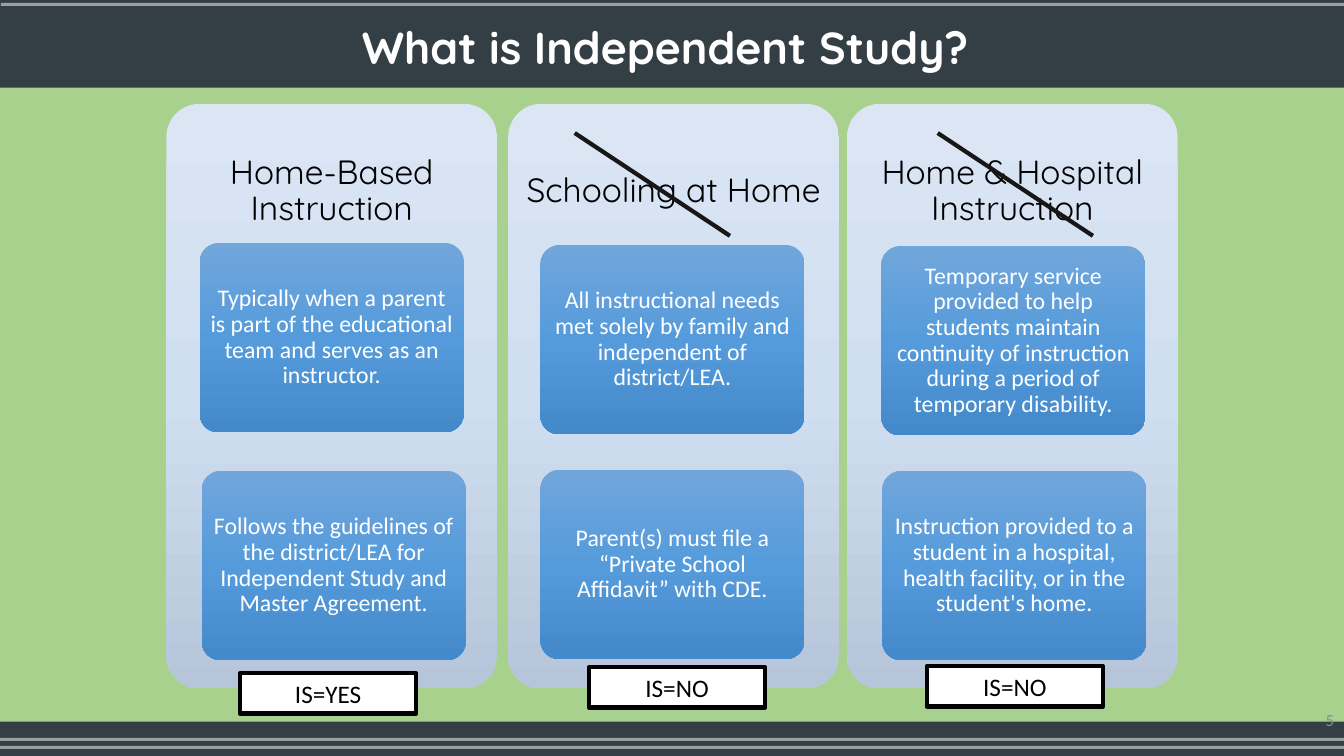
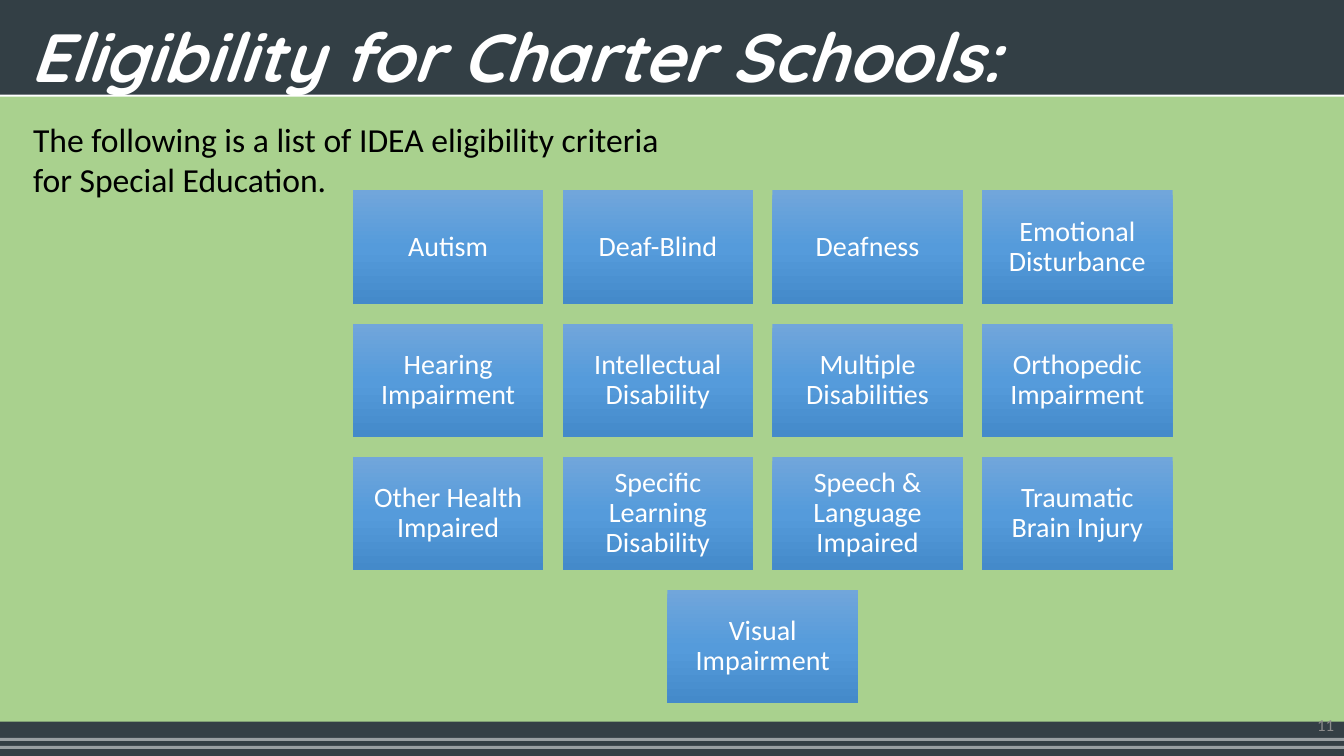
import copy

import pptx
import pptx.dml.color
import pptx.enum.shapes
import pptx.enum.text
import pptx.oxml
import pptx.oxml.ns
import pptx.util

Inches = pptx.util.Inches
Pt = pptx.util.Pt
RGBColor = pptx.dml.color.RGBColor
SHAPE = pptx.enum.shapes.MSO_SHAPE
ALIGN = pptx.enum.text.PP_ALIGN
ANCHOR = pptx.enum.text.MSO_ANCHOR
qn = pptx.oxml.ns.qn

# Shared colours, fonts and insets
SLATE = RGBColor(0x34, 0x3F, 0x45)
TITLE_BAND = RGBColor(0x33, 0x3F, 0x45)
GREEN = RGBColor(0xA9, 0xD1, 0x8E)
GREY = RGBColor(0x8C, 0x8C, 0x8C)
STRIKE = RGBColor(0x18, 0x17, 0x17)
WHITE = RGBColor(0xFF, 0xFF, 0xFF)
BLACK = RGBColor(0x00, 0x00, 0x00)
PALE_BLUES = [RGBColor(0xDB, 0xE5, 0xF3), RGBColor(0xD0, 0xDE, 0xF1), RGBColor(0xB6, 0xC5, 0xD9)]
BLUES = [RGBColor(0x71, 0xA6, 0xDB), RGBColor(0x55, 0x9B, 0xDB), RGBColor(0x44, 0x8A, 0xCA)]
BODY_FONT, HEAD_FONT = "Calibri", "Quicksand"
DEFAULT_INSETS = (0.1, 0.05, 0.1, 0.05)


def add_box(s, kind, at, fill):
    """Add an unlined shape with a solid fill, or a gradient if given a list."""
    sp = s.shapes.add_shape(kind, *map(Inches, at))
    sp.shadow.inherit = False
    sp.line.fill.background()
    if isinstance(fill, list):
        sp.fill.gradient()
        sp.fill.gradient_angle = 270
        stops = sp.element.spPr.find(".//" + qn("a:gsLst"))
        stops.insert(1, copy.deepcopy(stops[0]))
        for stop, color, position in zip(sp.fill.gradient_stops, fill, (0, 0.5, 1)):
            stop.color.rgb = color
            stop.position = position
    else:
        sp.fill.solid()
        sp.fill.fore_color.rgb = fill
    return sp


def set_text(sp, text, size, color, font=BODY_FONT, align=ALIGN.CENTER,
             anchor=ANCHOR.MIDDLE, insets=DEFAULT_INSETS, spacing=1.0, bold=False, italic=False):
    tf = sp.text_frame
    tf.text = text
    tf.word_wrap = True
    tf.auto_size = pptx.enum.text.MSO_AUTO_SIZE.NONE
    tf.vertical_anchor = anchor
    tf.margin_left, tf.margin_top, tf.margin_right, tf.margin_bottom = map(Inches, insets)
    p = tf.paragraphs[0]
    p.alignment = align
    p.line_spacing = spacing
    r = p.runs[0]
    r.font.name, r.font.size, r.font.color.rgb = font, Pt(size), color
    r.font.bold, r.font.italic = bold, italic


prs = pptx.Presentation()
prs.slide_width, prs.slide_height = Inches(13.33), Inches(7.5)
master = prs.slide_master
layout = prs.slide_layouts[5]
master.background.fill.solid()
master.background.fill.fore_color.rgb = SLATE

# Both slides: title, green panel, page number
slides = []
for title, at, panel_top, number, number_top in [
    ("What is Independent Study?", (0, 0.15, 13.2, 0.64), 0.87, "5", 6.94),
    ("Eligibility for Charter Schools:", (0, 0, 13.33, 0.94), 0.96, "11", 6.99),
]:
    s = prs.slides.add_slide(layout)
    add_box(s, SHAPE.RECTANGLE, (0, panel_top, 13.33, 7.16 - panel_top), GREEN)
    sp = s.shapes.title
    sp.left, sp.top, sp.width, sp.height = map(Inches, at)
    sp.text_frame.text = title
    s.shapes.element.append(sp.element)
    sp = s.shapes.add_textbox(Inches(10.33), Inches(number_top), Inches(3), Inches(0.4))
    set_text(sp, number, 12, GREY, align=ALIGN.RIGHT)
    slides.append(s)
study, charter = slides

# Master: white panel and translucent stripes
for i, (x, y, height, alpha) in enumerate([
    (0, 0.88, 6.26, 100), (0, 7.32, 0.03, 50), (0, 7.4, 0.03, 50), (0.01, 0.03, 0.03, 50),
]):
    sp = add_box(study, SHAPE.RECTANGLE, (x, y, 13.33, height), WHITE)
    if alpha < 100:
        color = sp.element.spPr.find(".//" + qn("a:srgbClr"))
        pptx.oxml.parse_xml(
            '<a:alpha xmlns:a="http://schemas.openxmlformats.org/drawingml/2006/main" '
            f'val="{alpha * 1000}"/>')
        color.makeelement(qn("a:alpha"))
        alpha_el = color.makeelement(qn("a:alpha"), {"val": str(alpha * 1000)})
        color.append(alpha_el)
    sp.element.nvSpPr.cNvPr.set("id", str(100 + i))
    master.shapes.element.insert(2 + i, sp.element)

# Slide 1: three columns of cards with a verdict below each
set_text(study.shapes.title, study.shapes.title.text_frame.text, 32, WHITE, HEAD_FONT,
         anchor=ANCHOR.TOP, bold=True)
columns = [
    (1.65, "Home-Based Instruction", [
        (1.98, 2.41, "Typically when a parent is part of the educational team and serves as an instructor."),
        (2.0, 4.67, "Follows the guidelines of the district/LEA for Independent Study and Master Agreement."),
    ], (2.38, 6.68, "IS=YES"), None),
    (5.04, "Schooling at Home", [
        (5.36, 2.43, "All instructional needs met solely by family and independent of district/LEA."),
        (5.36, 4.66, "Parent(s) must file a “Private School Affidavit” with CDE."),
    ], (5.84, 6.62, "IS=NO"), 5.7),
    (8.4, "Home & Hospital Instruction", [
        (8.74, 2.44, "Temporary service provided to help students maintain continuity of "
                     "instruction during a period of temporary disability."),
        (8.75, 4.67, "Instruction provided to a student in a hospital, health facility, "
                     "or in the student's home."),
    ], (9.19, 6.61, "IS=NO"), 9.3),
]
for left, heading, cards, (label_x, label_y, verdict), strike_x in columns:
    sp = add_box(study, SHAPE.ROUNDED_RECTANGLE, (left, 1.03, 3.28, 5.8), PALE_BLUES)
    sp.adjustments[0] = 0.1
    set_text(sp, heading, 24, BLACK, HEAD_FONT, insets=(0, 0, 0, 4.06), spacing=0.9)
    for x, y, text in cards:
        sp = add_box(study, SHAPE.ROUNDED_RECTANGLE, (x, y, 2.62, 1.88), BLUES)
        sp.adjustments[0] = 0.1
        set_text(sp, text, 17, WHITE, insets=(0.05, 0.04, 0.05, 0.04), spacing=0.9)
    sp = add_box(study, SHAPE.RECTANGLE, (label_x, label_y, 1.75, 0.4), WHITE)
    sp.line.color.rgb, sp.line.width = BLACK, Pt(3)
    set_text(sp, verdict, 18, BLACK)
    if strike_x:
        line = study.shapes.add_connector(
            pptx.enum.shapes.MSO_CONNECTOR.STRAIGHT,
            Inches(strike_x), Inches(1.32), Inches(strike_x + 1.54), Inches(2.34))
        line.line.color.rgb, line.line.width = STRIKE, Pt(3)
        sp_pr = line.element.spPr
        sp_pr.append(sp_pr.makeelement(qn("a:effectLst")))

# Slide 2: title band, grid of criteria, introduction
sp = charter.shapes.title
sp.fill.solid()
sp.fill.fore_color.rgb = TITLE_BAND
set_text(sp, sp.text_frame.text, 48.6, WHITE, HEAD_FONT, align=ALIGN.LEFT,
         insets=(0.3, 0.3, 0.1, 0.05), spacing=0.9, bold=True, italic=True)

criteria = [
    ["Autism", "Deaf-Blind", "Deafness", "Emotional Disturbance"],
    ["Hearing Impairment", "Intellectual Disability", "Multiple Disabilities", "Orthopedic Impairment"],
    ["Other Health Impaired", "Specific Learning Disability", "Speech & Language Impaired",
     "Traumatic Brain Injury"],
    ["Visual Impairment"],
]
tile_w, tile_h, gap = 1.89, 1.13, 0.19
for row, names in enumerate(criteria):
    indent = (4 - len(names)) * (tile_w + gap) / 2
    for col, name in enumerate(names):
        at = (3.5 + indent + col * (tile_w + gap), 1.89 + row * (tile_h + gap), tile_w, tile_h)
        sp = add_box(charter, SHAPE.RECTANGLE, at, BLUES)
        set_text(sp, name, 20, WHITE, insets=(0.08,) * 4, spacing=0.9)

sp = charter.shapes.add_textbox(Inches(0.23), Inches(1.13), Inches(6.67), Inches(0.91))
set_text(sp, "The following is a list of IDEA eligibility criteria for Special Education.",
         24, BLACK, align=ALIGN.LEFT, anchor=ANCHOR.TOP)

prs.save("out.pptx")
